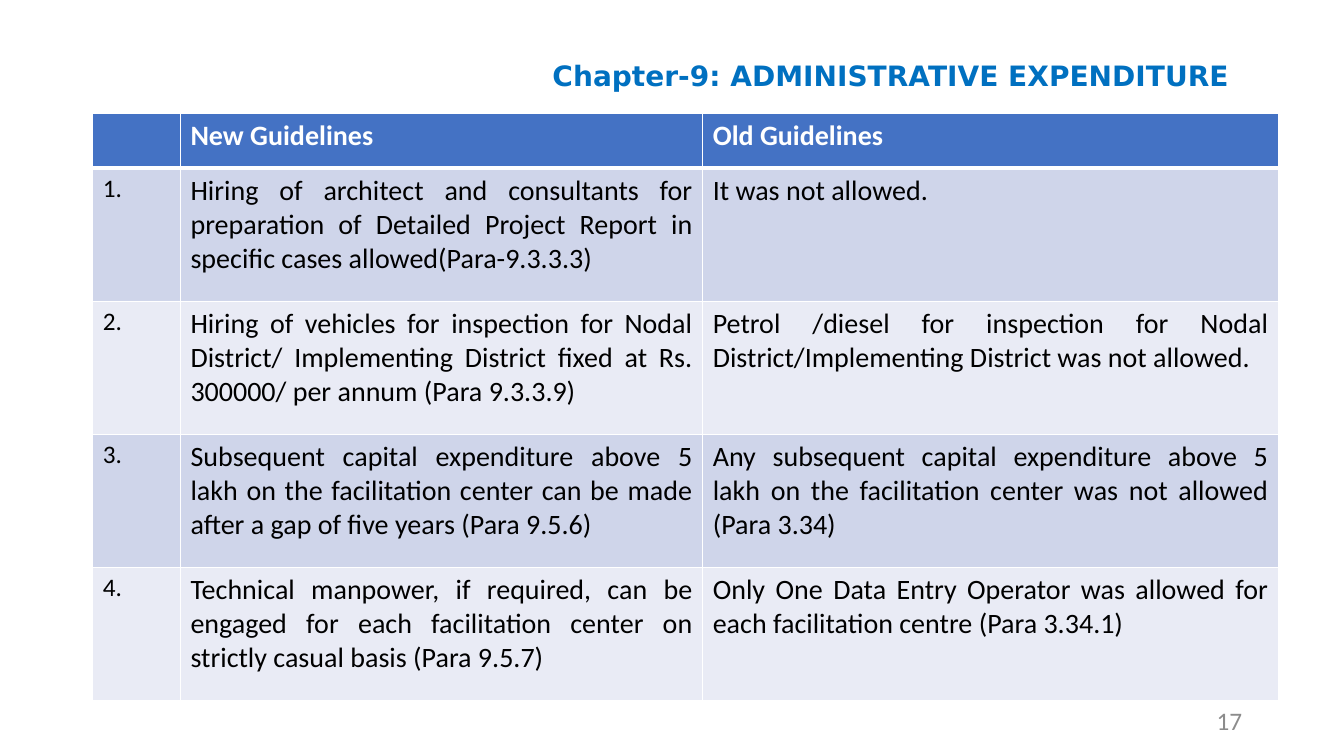
from dataclasses import dataclass

from lxml import etree
from pptx import Presentation
from pptx.dml.color import RGBColor
from pptx.enum.text import MSO_ANCHOR, MSO_AUTO_SIZE, PP_ALIGN
from pptx.oxml.ns import qn
from pptx.util import Inches, Pt

LEFT, CENTER, RIGHT, JUSTIFY = PP_ALIGN.LEFT, PP_ALIGN.CENTER, PP_ALIGN.RIGHT, PP_ALIGN.JUSTIFY
MIDDLE, TOP = MSO_ANCHOR.MIDDLE, MSO_ANCHOR.TOP
FIT_SHAPE, NO_FIT = MSO_AUTO_SIZE.SHAPE_TO_FIT_TEXT, MSO_AUTO_SIZE.NONE

COLORS = {
    "white": "FFFFFF",
    "black": "000000",
    "title": "0070C0",
    "page_number": "8C8C8C",
    "header": "4472C4",
    "odd_row": "CFD5EA",
    "even_row": "E9EBF5",
}
COLUMN_WIDTHS = (0.87, 5.18, 5.71)
HEADER_HEIGHT, ROW_HEIGHT = 0.54, 1.32


@dataclass(frozen=True)
class Style:
    size: int
    color: str
    font: str = "Calibri"
    bold: bool = False
    align: PP_ALIGN = LEFT


@dataclass(frozen=True)
class Guideline:
    new: str
    old: str


TITLE = Style(20, "title", "DejaVu Sans", True, CENTER)
PAGE_NUMBER = Style(18, "page_number", align=RIGHT)
HEADER = Style(20, "white", bold=True)
ROW_NUMBER = Style(18, "black")
BODY = Style(20, "black", align=JUSTIFY)

GUIDELINES = (
    Guideline(
        "Hiring of architect and consultants for preparation of Detailed Project Report "
        "in specific cases allowed(Para-9.3.3.3)",
        "It was not allowed.",
    ),
    Guideline(
        "Hiring of vehicles for inspection for Nodal District/ Implementing District "
        "fixed at Rs. 300000/ per annum (Para 9.3.3.9)",
        "Petrol /diesel for inspection for Nodal District/Implementing District was not allowed.",
    ),
    Guideline(
        "Subsequent capital expenditure above 5 lakh on the facilitation center can be made "
        "after a gap of five years (Para 9.5.6)",
        "Any subsequent capital expenditure above 5 lakh on the facilitation center "
        "was not allowed (Para 3.34)",
    ),
    Guideline(
        "Technical manpower, if required, can be engaged for each facilitation center "
        "on strictly casual basis (Para 9.5.7)",
        "Only One Data Entry Operator was allowed for each facilitation centre (Para 3.34.1)",
    ),
)


def rgb(name: str) -> RGBColor:
    return RGBColor.from_string(COLORS[name])


def write(frame, text: str, style: Style) -> None:
    para = frame.paragraphs[0]
    para.alignment = style.align
    span = para.add_run()
    span.text = text
    span.font.name = style.font
    span.font.size = Pt(style.size)
    span.font.bold = style.bold
    span.font.color.rgb = rgb(style.color)


def add_text(page, place: tuple, text: str, style: Style, wrap: bool, anchor, fit) -> None:
    box = page.shapes.add_textbox(*map(Inches, place))
    frame = box.text_frame
    frame.word_wrap = wrap
    frame.vertical_anchor = anchor
    frame.auto_size = fit
    write(frame, text, style)
    frame.paragraphs[0].space_after = Pt(8) if style is TITLE else Pt(0)


def paint_cell(cell, fill: str, top: int, bottom: int) -> None:
    """Give a cell its fill and white borders, with top and bottom widths in points."""
    properties = cell._tc.get_or_add_tcPr()
    for side, width in (("L", 1), ("R", 1), ("T", top), ("B", bottom)):
        line = etree.SubElement(properties, qn(f"a:ln{side}"), w=str(Pt(width)))
        solid = etree.SubElement(line, qn("a:solidFill"))
        etree.SubElement(solid, qn("a:srgbClr"), val=COLORS["white"])
    cell.fill.solid()
    cell.fill.fore_color.rgb = rgb(fill)


def add_guidelines_table(page) -> None:
    heights = [HEADER_HEIGHT] + [ROW_HEIGHT] * len(GUIDELINES)
    table = page.shapes.add_table(
        len(heights), len(COLUMN_WIDTHS),
        Inches(0.92), Inches(1.13), Inches(sum(COLUMN_WIDTHS)), Inches(sum(heights)),
    ).table
    table.horz_banding = False
    for column, width in zip(table.columns, COLUMN_WIDTHS):
        column.width = Inches(width)
    for row, height in zip(table.rows, heights):
        row.height = Inches(height)

    for column, heading in enumerate(("", "New Guidelines", "Old Guidelines")):
        cell = table.cell(0, column)
        paint_cell(cell, "header", 1, 3)
        if heading:
            write(cell.text_frame, heading, HEADER)

    for number, guideline in enumerate(GUIDELINES, 1):
        entries = ((f"{number}.", ROW_NUMBER), (guideline.new, BODY), (guideline.old, BODY))
        for column, (text, style) in enumerate(entries):
            cell = table.cell(number, column)
            paint_cell(cell, "odd_row" if number % 2 else "even_row", 3 if number == 1 else 1, 1)
            write(cell.text_frame, text, style)


def main() -> None:
    deck = Presentation()
    deck.slide_width, deck.slide_height = Inches(13.33), Inches(7.5)
    page = deck.slides.add_slide(deck.slide_layouts[6])
    add_text(page, (9.42, 6.95, 3, 0.4), "17", PAGE_NUMBER, True, MIDDLE, NO_FIT)
    add_text(page, (5.25, 0.53, 7.17, 0.44), "Chapter-9: ADMINISTRATIVE EXPENDITURE",
             TITLE, False, TOP, FIT_SHAPE)
    add_guidelines_table(page)
    deck.save("out.pptx")


if __name__ == "__main__":
    main()
